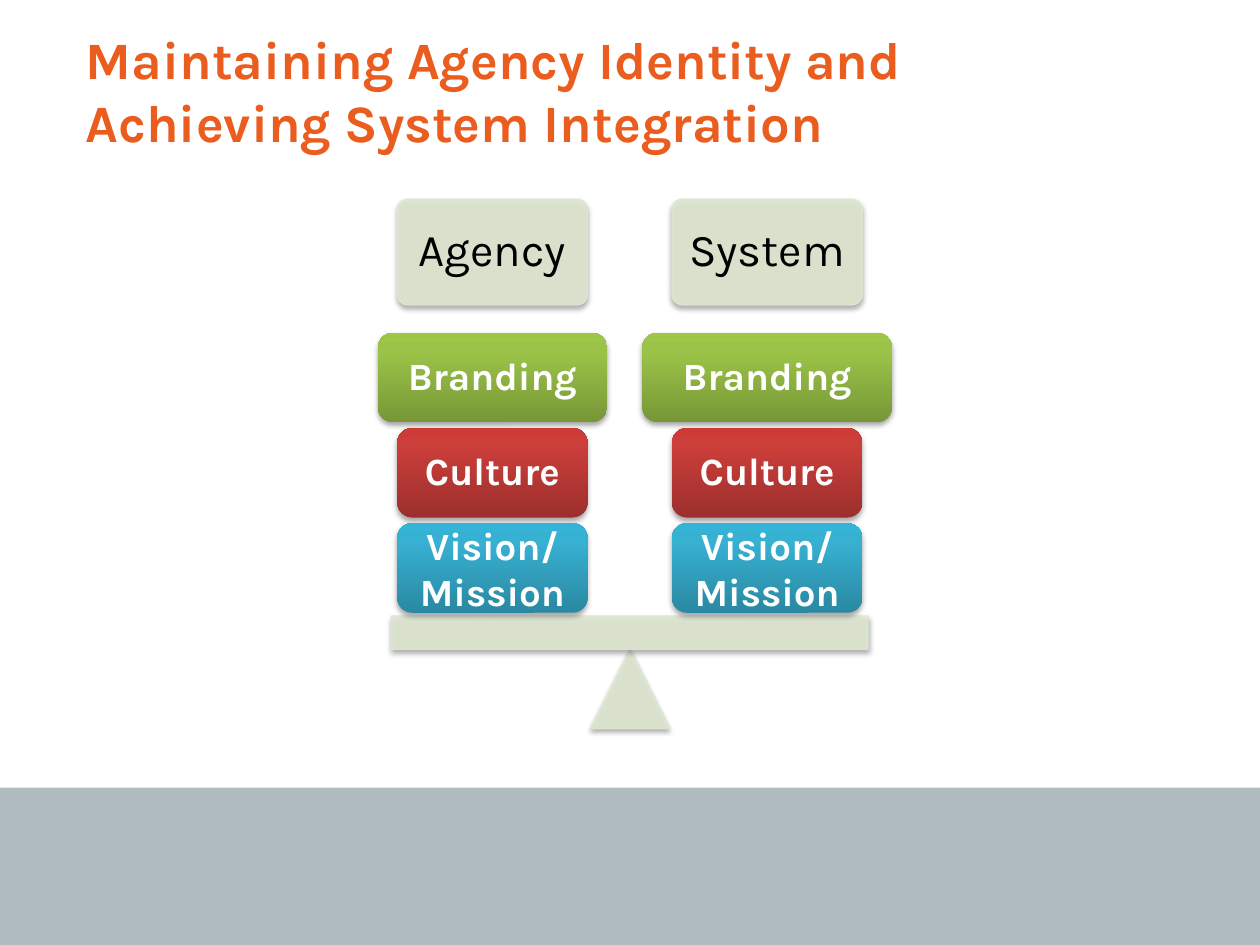
from typing import NamedTuple

from lxml.etree import SubElement
from pptx import Presentation
from pptx.dml.color import RGBColor
from pptx.enum.shapes import MSO_SHAPE
from pptx.enum.text import MSO_ANCHOR, PP_ALIGN
from pptx.oxml.ns import qn
from pptx.util import Pt

FONT = "Karla"
PALE = "DEE7D1"
WHITE = "FFFFFF"
BLOCK = {"size": Pt(22), "bold": True, "name": FONT}
HEAD = {"size": Pt(26), "bold": False, "name": FONT}
TITLE = {"size": Pt(30), "bold": True, "name": FONT}


class Layer(NamedTuple):
    """One level of both stacks; stops run from bottom to top."""
    lines: tuple[str, ...]
    stops: tuple[str, str, str]
    widths: tuple[float, float]
    lead: float


class Side(NamedTuple):
    name: str
    mid: float


SIDES = (Side("Agency", 281.4), Side("System", 438.4))
WIDE = 108.8
LAYERS = (
    Layer(("Branding",), ("779737", "9BC348", "9DC746"), (131, 142.6), 0.9),
    Layer(("Culture",), ("9C2F2D", "CB3E3A", "CE3B37"), (WIDE, WIDE), 0.9),
    Layer(("Vision/", "Mission"), ("2A88A2", "37B1D2", "34B4D6"), (WIDE, WIDE), 1),
)
TOP, STEP, TALL = 190.2, 54.4, 51.2


def tint(color, code: str) -> None:
    color.rgb = RGBColor.from_string(code)


def write(shape, lines: tuple[str, ...], form: dict, code: str,
          align=PP_ALIGN.CENTER, lead: float = 1) -> None:
    frame = shape.text_frame
    frame.word_wrap = True
    for i, line in enumerate(lines):
        para = frame.add_paragraph() if i else frame.paragraphs[0]
        para.alignment = align
        para.line_spacing = lead
        run = para.add_run()
        run.text = line
        for key, value in form.items():
            setattr(run.font, key, value)
        tint(run.font.color, code)


def draw(slide, kind, left: float, top: float, width: float, height: float):
    shape = slide.shapes.add_shape(kind, Pt(left), Pt(top), Pt(width), Pt(height))
    shape.shadow.inherit = False
    shape.line.fill.background()
    frame = shape.text_frame
    frame.vertical_anchor = MSO_ANCHOR.MIDDLE
    for edge in ("left", "top", "right", "bottom"):
        setattr(frame, f"margin_{edge}", Pt(6.5))
    return shape


def shade(shape) -> None:
    """Soft shadow straight below the shape."""
    effects = shape.element.spPr.find(qn("a:effectLst"))
    cast = SubElement(effects, qn("a:outerShdw"), blurRad=str(Pt(3.1)),
                      dist=str(Pt(1.8)), dir="5400000", rotWithShape="0")
    black = SubElement(cast, qn("a:srgbClr"), val="000000")
    SubElement(black, qn("a:alpha"), val="35000")


def pale(shape) -> None:
    """Pale fill and line, both 90% opaque, with a shadow."""
    shape.fill.solid()
    tint(shape.fill.fore_color, PALE)
    shape.line.fill.solid()
    tint(shape.line.color, PALE)
    shape.line.width = Pt(0.75)
    for color in shape.element.spPr.iter(qn("a:srgbClr")):
        SubElement(color, qn("a:alpha"), val="90000")
    shade(shape)


def blend(shape, stops: tuple[str, str, str]) -> None:
    shape.fill.gradient()
    shape.fill.gradient_angle = 90
    group = next(shape.element.spPr.iter(qn("a:gsLst")))
    for old in list(group):
        group.remove(old)
    for place, code in zip((0, 80, 100), stops):
        stop = SubElement(group, qn("a:gs"), pos=str(place * 1000))
        SubElement(stop, qn("a:srgbClr"), val=code)
    shade(shape)


def main() -> None:
    deck = Presentation()
    deck.slide_width, deck.slide_height = Pt(720), Pt(540)
    slide = deck.slides.add_slide(deck.slide_layouts[6])

    # Footer band
    band = draw(slide, MSO_SHAPE.RECTANGLE, 0, 450, 720, 90)
    band.fill.solid()
    tint(band.fill.fore_color, "B0BCC0")

    # Title
    title = slide.shapes.add_textbox(Pt(41.8), Pt(12.2), Pt(595.4), Pt(80))
    write(title, ("Maintaining Agency Identity and Achieving System Integration",),
          TITLE, "EA5D1E", PP_ALIGN.LEFT)

    # Column heads
    for side in SIDES:
        head = draw(slide, MSO_SHAPE.ROUNDED_RECTANGLE,
                    side.mid - WIDE / 2, 113.8, WIDE, 60.5)
        head.adjustments[0] = 0.1
        pale(head)
        write(head, (side.name,), HEAD, "000000", lead=0.9)

    # Seesaw
    pale(draw(slide, MSO_SHAPE.ISOSCELES_TRIANGLE, 337.4, 371, 45.4, 45.4))
    pale(draw(slide, MSO_SHAPE.RECTANGLE, 223.8, 352, 272.2, 19))

    # Stacked blocks
    for col, side in enumerate(SIDES):
        for row, layer in enumerate(LAYERS):
            width = layer.widths[col]
            block = draw(slide, MSO_SHAPE.ROUNDED_RECTANGLE,
                         side.mid - width / 2, TOP + row * STEP, width, TALL)
            blend(block, layer.stops)
            write(block, layer.lines, BLOCK, WHITE, lead=layer.lead)

    deck.save("out.pptx")


if __name__ == "__main__":
    main()
